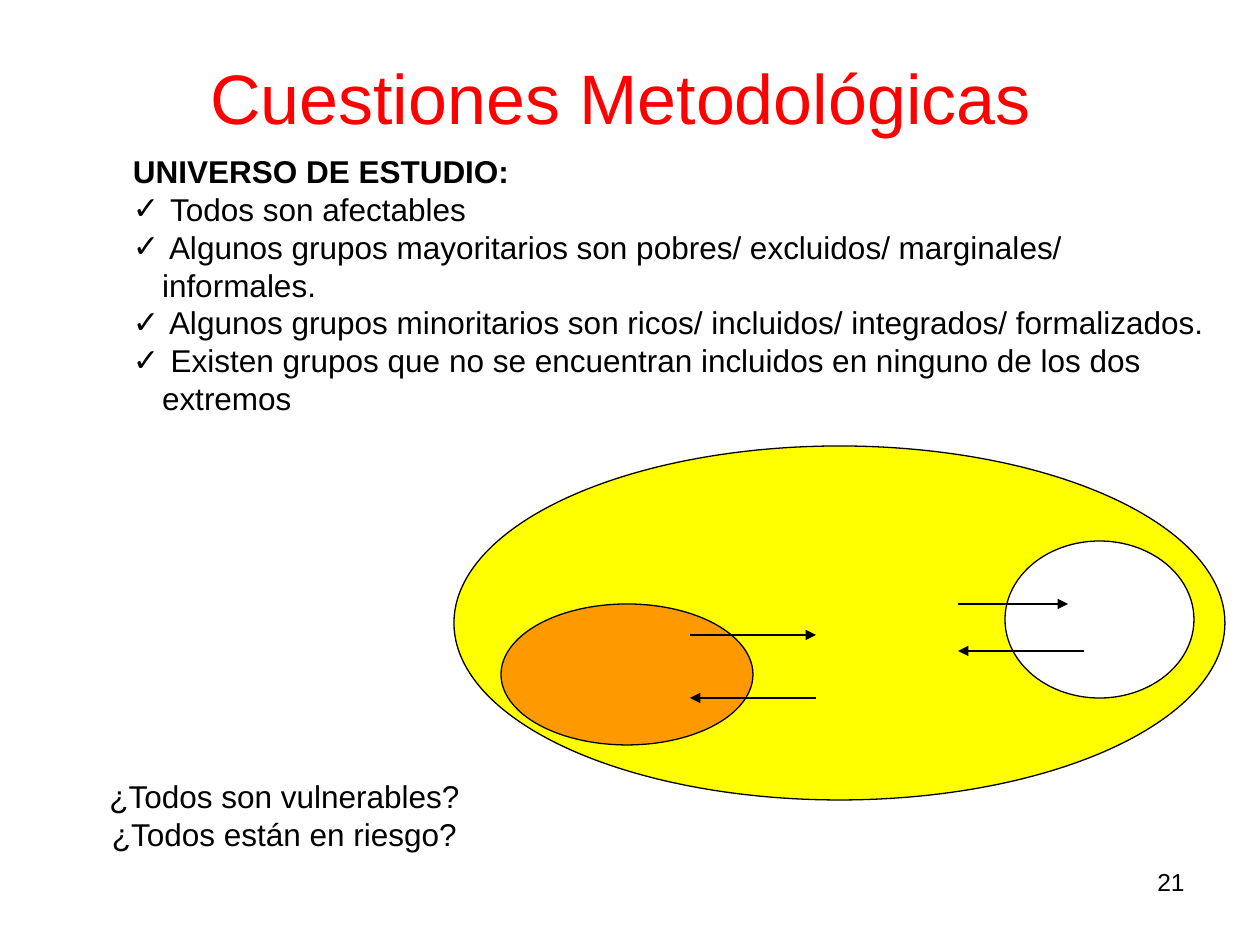
import dataclasses
import pptx
import pptx.dml.color
import pptx.enum.shapes
import pptx.enum.text
import pptx.oxml
import pptx.util

Align = pptx.enum.text.PP_ALIGN
Fit = pptx.enum.text.MSO_AUTO_SIZE
Mid = pptx.enum.text.MSO_ANCHOR.MIDDLE
Oval = pptx.enum.shapes.MSO_SHAPE.OVAL
Line = pptx.enum.shapes.MSO_CONNECTOR.STRAIGHT
rgb = pptx.dml.color.RGBColor.from_string
SPACE = 'xmlns:a="http://schemas.openxmlformats.org/drawingml/2006/main"'


@dataclasses.dataclass
class Theme:
    face: str = "Arial"
    ink: str = "000000"
    head: str = "FF0000"
    whole: str = "FFFF00"
    poor: str = "FF9900"
    rich: str = "FFFFFF"
    title: int = 40
    text: int = 18
    page: int = 14
    rule: float = 0.75


theme = Theme()


def px(n):
    return pptx.util.Emu(round(n * 914400 / 126))


def write(shape, box, text, size, color, align):
    shape.left, shape.top, shape.width, shape.height = map(px, box)
    frame = shape.text_frame
    frame.text = text
    for para in frame.paragraphs:
        para.alignment = align
        para.space_before = pptx.util.Pt(0)
        for run in para.runs:
            run.font.name = theme.face
            run.font.size = pptx.util.Pt(size)
            run.font.color.rgb = rgb(color)
    return frame


deck = pptx.Presentation()
deck.slide_width, deck.slide_height = px(1260), px(945)
slide = deck.slides.add_slide(deck.slide_layouts[1])

frame = write(slide.shapes.title, (63, 38, 1134, 117),
              "Cuestiones Metodológicas ", theme.title, theme.head, Align.CENTER)
frame.vertical_anchor = Mid

items = [
    "UNIVERSO DE ESTUDIO:",
    " Todos son afectables",
    " Algunos grupos mayoritarios son pobres/ excluidos/ marginales/ informales.",
    " Algunos grupos minoritarios son ricos/ incluidos/ integrados/ formalizados.",
    " Existen grupos que no se encuentran incluidos en ninguno de los dos extremos",
]
frame = write(slide.placeholders[1], (-25, 184, 1260, 195),
              "\n".join(items), theme.text, theme.ink, Align.LEFT)
frame.auto_size = Fit.SHAPE_TO_FIT_TEXT
frame.vertical_anchor = Mid
frame.margin_left, frame.margin_top = px(95), px(6)
frame.margin_right, frame.margin_bottom = px(13), px(0)
for i, para in enumerate(frame.paragraphs):
    props = para._p.get_or_add_pPr()
    props.set("marL", str(px(92 if i else 63)))
    props.set("indent", str(px(-29 if i else 0)))
    mark = '<a:buChar %s char="✓"/>' if i else "<a:buNone %s/>"
    props.append(pptx.oxml.parse_xml(mark % SPACE))
frame.paragraphs[0].runs[0].font.bold = True

group = slide.shapes.add_group_shape()
for box, fill in [
    ((454, 446, 771, 354), theme.whole),
    ((501, 604, 252, 141), theme.poor),
    ((1005, 541, 189, 157), theme.rich),
]:
    oval = group.shapes.add_shape(Oval, *map(px, box))
    oval.shadow.inherit = False
    oval.fill.solid()
    oval.fill.fore_color.rgb = rgb(fill)
    oval.line.color.rgb = rgb(theme.ink)
    oval.line.width = pptx.util.Pt(theme.rule)

for start, end, y in [(816, 690, 698), (1084, 958, 651),
                      (690, 816, 635), (958, 1068, 604)]:
    arrow = group.shapes.add_connector(Line, px(start), px(y), px(end), px(y))
    arrow.line.color.rgb = rgb(theme.ink)
    arrow.line.width = pptx.util.Pt(theme.rule)
    arrow.line._get_or_add_ln().append(
        pptx.oxml.parse_xml(f'<a:tailEnd {SPACE} type="triangle"/>'))
    arrow._element.spPr.append(pptx.oxml.parse_xml(f"<a:effectLst {SPACE}/>"))

asks = slide.shapes.add_textbox(0, 0, 0, 0)
frame = write(asks, (95, 771, 379, 88),
              "¿Todos son vulnerables?\n¿Todos están en riesgo?",
              theme.text, theme.ink, Align.CENTER)
frame.word_wrap = False
frame.auto_size = Fit.SHAPE_TO_FIT_TEXT
frame.vertical_anchor = Mid

page = slide.shapes.add_textbox(0, 0, 0, 0)
frame = write(page, (903, 861, 294, 66), "21", theme.page, theme.ink, Align.RIGHT)
frame.word_wrap = True

deck.save("out.pptx")
